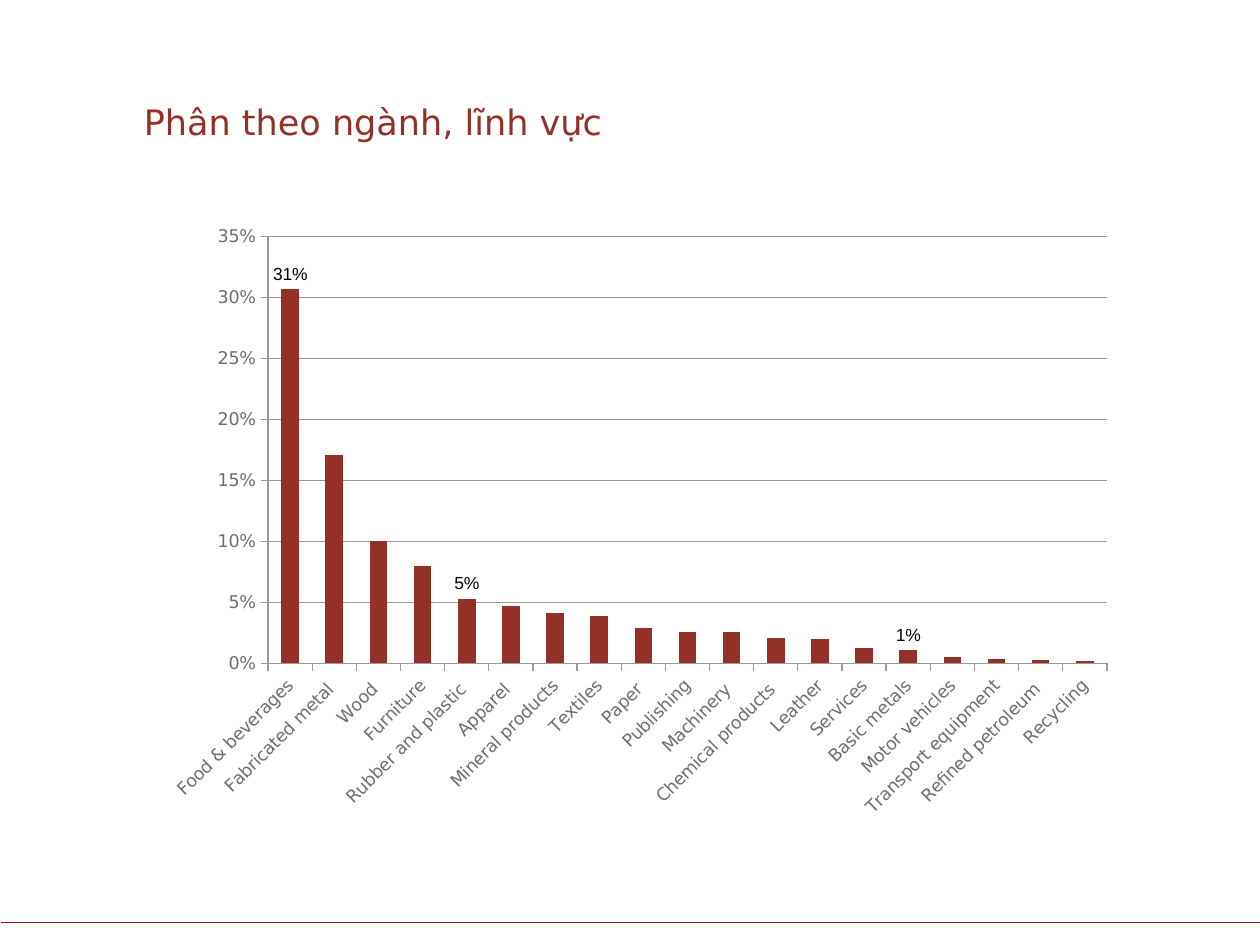
from dataclasses import dataclass

from lxml import etree
from pptx import Presentation
from pptx.chart import data as cd
from pptx.dml.color import RGBColor
from pptx.enum import chart as ch, shapes, text
from pptx.oxml import ns
from pptx.util import Pt


@dataclass(frozen=True)
class Theme:
    red: RGBColor = RGBColor.from_string("933027")
    rule: RGBColor = RGBColor.from_string("901A1E")
    gray: RGBColor = RGBColor.from_string("6E6E6E")
    grid: RGBColor = RGBColor.from_string("9A9A9A")
    black: RGBColor = RGBColor.from_string("000000")
    face: str = "DejaVu Sans"
    plain: str = "Arial"
    head: int = 20
    small: int = 10


T = Theme()

SHARES = {
    "Food & beverages": 0.307,
    "Fabricated metal ": 0.171,
    "Wood ": 0.1,
    "Furniture": 0.08,
    "Rubber and plastic ": 0.053,
    "Apparel ": 0.047,
    "Mineral products": 0.041,
    "Textiles": 0.039,
    "Paper ": 0.029,
    "Publishing": 0.026,
    "Machinery ": 0.026,
    "Chemical products ": 0.021,
    "Leather": 0.02,
    "Services": 0.013,
    "Basic metals": 0.011,
    "Motor vehicles": 0.005,
    "Transport equipment": 0.004,
    "Refined petroleum ": 0.003,
    "Recycling": 0.002,
}
LABELED = ("Food & beverages", "Rubber and plastic ", "Basic metals")


def style(font, size, color, face):
    font.size, font.name, font.bold = Pt(size), face, False
    font.color.rgb = color


def stroke(line, color, width=0.75):
    line.color.rgb = color
    line.width = Pt(width)


def add_title(slide, x, y, w, h):
    box = slide.shapes.add_textbox(Pt(x), Pt(y), Pt(w), Pt(h))
    frame = box.text_frame
    frame.word_wrap = True
    frame.vertical_anchor = text.MSO_ANCHOR.BOTTOM
    frame.margin_left = frame.margin_right = 0
    frame.margin_top = frame.margin_bottom = 0
    frame.text = "Phân theo ngành, lĩnh vực"
    style(frame.paragraphs[0].runs[0].font, T.head, T.red, T.face)


def place_plot(chart, w, h, left, top, wide, high):
    """Fix the inner plot area, given in points within the chart box."""
    area = chart.plots[0]._element.getparent()
    old = area.find(ns.qn("c:layout"))
    if old is not None:
        area.remove(old)
    layout = etree.Element(ns.qn("c:layout"))
    area.insert(0, layout)
    manual = etree.SubElement(layout, ns.qn("c:manualLayout"))
    parts = {"layoutTarget": "inner", "xMode": "edge", "yMode": "edge",
             "x": left / w, "y": top / h, "w": wide / w, "h": high / h}
    for tag, value in parts.items():
        etree.SubElement(manual, ns.qn(f"c:{tag}")).set("val", str(value))


def add_bars(slide, x, y, w, h):
    data = cd.CategoryChartData(number_format="0%")
    data.categories = list(SHARES)
    data.add_series("Series 1", list(SHARES.values()))
    chart = slide.shapes.add_chart(
        ch.XL_CHART_TYPE.COLUMN_CLUSTERED, Pt(x), Pt(y), Pt(w), Pt(h), data
    ).chart
    chart.has_title = chart.has_legend = False
    style(chart.font, T.small, T.gray, T.face)
    place_plot(chart, w, h, left=65.4, top=12.8, wide=479.4, high=244)

    # Axes and gridlines
    for axis in (chart.category_axis, chart.value_axis):
        axis.major_tick_mark = ch.XL_TICK_MARK.OUTSIDE
        axis.minor_tick_mark = ch.XL_TICK_MARK.NONE
        stroke(axis.format.line, T.grid)
        style(axis.tick_labels.font, T.small, T.gray, T.face)
    body = chart.category_axis._element.find(ns.qn("c:txPr"))
    body.find(ns.qn("a:bodyPr")).set("rot", "-2700000")
    scale = chart.value_axis
    scale.minimum_scale, scale.maximum_scale, scale.major_unit = 0, 0.35, 0.05
    scale.tick_labels.number_format = "0%"
    scale.tick_labels.number_format_is_linked = False
    scale.has_major_gridlines = True
    stroke(scale.major_gridlines.format.line, T.grid, 0.5)

    # Columns and the labelled points
    plot = chart.plots[0]
    plot.vary_by_categories = False
    plot.gap_width = 150
    bars = plot.series[0]
    bars.format.fill.solid()
    bars.format.fill.fore_color.rgb = T.red
    for name in LABELED:
        label = bars.points[list(SHARES).index(name)].data_label
        style(label.font, T.small, T.black, T.plain)
        label.position = ch.XL_LABEL_POSITION.OUTSIDE_END


def add_rule(slide, x, y, w):
    line = slide.shapes.add_connector(
        shapes.MSO_CONNECTOR.STRAIGHT, Pt(x + w), Pt(y), Pt(x), Pt(y))
    stroke(line.line, T.rule)
    etree.SubElement(line._element.spPr, ns.qn("a:effectLst"))


def main():
    deck = Presentation()
    deck.slide_width, deck.slide_height = Pt(720), Pt(540)
    slide = deck.slides.add_slide(deck.slide_layouts[6])
    add_rule(slide, 0.5, 527, 720)
    add_title(slide, 82.2, 36, 517.5, 45.4)
    add_bars(slide, 87.8, 122.4, 555.8, 351.4)
    deck.save("out.pptx")


if __name__ == "__main__":
    main()
